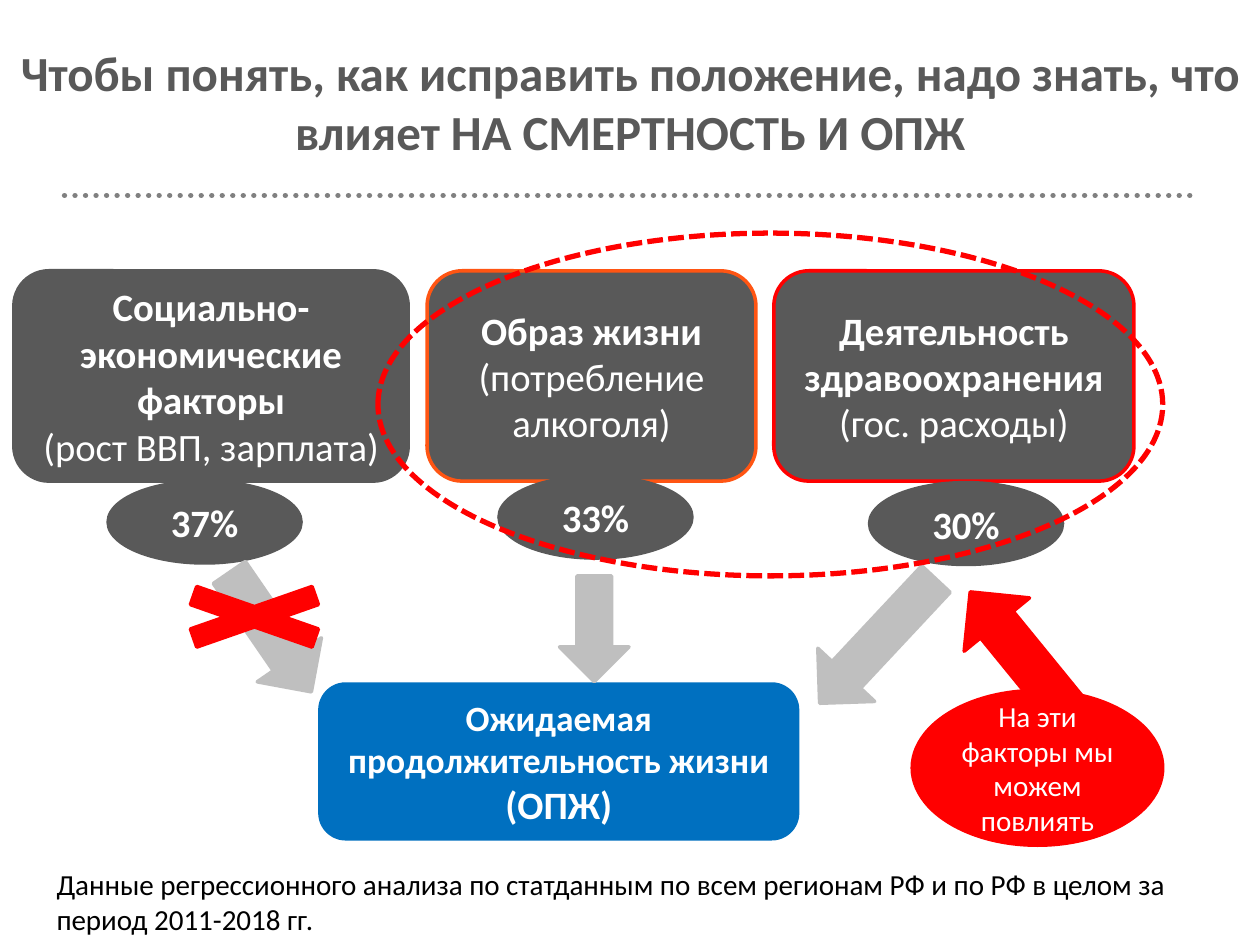
from dataclasses import dataclass
from typing import Optional

from lxml import etree
from pptx import Presentation
from pptx import util as u
from pptx.dml.color import RGBColor
from pptx.enum import dml, shapes, text
from pptx.oxml import ns

DARK = RGBColor(0x59, 0x59, 0x59)
MID = RGBColor(0x80, 0x80, 0x80)
PALE = RGBColor(0xBF, 0xBF, 0xBF)
BLUE = RGBColor(0x00, 0x70, 0xC0)
RED = RGBColor(0xFF, 0x00, 0x00)
AMBER = RGBColor(0xFF, 0x55, 0x13)
WHITE = RGBColor(0xFF, 0xFF, 0xFF)
BLACK = RGBColor(0x00, 0x00, 0x00)
FONT = "Calibri"
KIND = shapes.MSO_SHAPE


@dataclass
class Run:
    words: str
    size: float = 22.1
    bold: bool = True
    tint: RGBColor = WHITE


@dataclass
class Item:
    kind: shapes.MSO_SHAPE
    left: float
    top: float
    width: float
    height: float
    fill: Optional[RGBColor]
    edge: RGBColor
    runs: tuple[Run, ...] = ()
    turn: float = 0


@dataclass
class Factor:
    name: str
    detail: str
    left: float
    width: float
    edge: RGBColor
    share: str
    share_left: float
    share_top: float


def place(shape, left: float, top: float, width: float, height: float) -> None:
    shape.left, shape.top = u.Cm(left), u.Cm(top)
    shape.width, shape.height = u.Cm(width), u.Cm(height)


def write(frame, runs: tuple[Run, ...], align: text.PP_ALIGN) -> None:
    """Put each run in a paragraph of its own."""
    frame.word_wrap = True
    for i, item in enumerate(runs):
        para = frame.paragraphs[0] if i == 0 else frame.add_paragraph()
        para.alignment = align
        run = para.add_run()
        run.text = item.words
        font = run.font
        font.name, font.size, font.bold = FONT, u.Pt(item.size), item.bold
        font.color.rgb = item.tint


def draw(slide, item: Item):
    shape = slide.shapes.add_shape(
        item.kind, u.Cm(item.left), u.Cm(item.top), u.Cm(item.width), u.Cm(item.height))
    shape.shadow.inherit = False
    shape.rotation = item.turn
    if item.fill is None:
        shape.fill.background()
    else:
        shape.fill.solid()
        shape.fill.fore_color.rgb = item.fill
    shape.line.color.rgb = item.edge
    shape.line.width = u.Pt(2)
    if item.runs:
        shape.text_frame.vertical_anchor = text.MSO_ANCHOR.MIDDLE
        write(shape.text_frame, item.runs, text.PP_ALIGN.CENTER)
    return shape


def draw_rule(slide) -> None:
    """Draw the dotted line under the title."""
    rule = slide.shapes.add_connector(
        shapes.MSO_CONNECTOR.STRAIGHT, u.Cm(1.3), u.Cm(3.94), u.Cm(24.1), u.Cm(3.94))
    rule.line.color.rgb = MID
    rule.line.width = u.Pt(3)
    rule.line.dash_style = dml.MSO_LINE.ROUND_DOT
    rule.line._get_or_add_ln().set("cap", "rnd")
    etree.SubElement(rule._element.spPr, ns.qn("a:effectLst"))


def draw_title(slide) -> None:
    title = slide.shapes.title
    place(title, 0, 0.15, 25.4, 3.78)
    frame = title.text_frame
    frame.auto_size = text.MSO_AUTO_SIZE.NONE
    frame.vertical_anchor = text.MSO_ANCHOR.MIDDLE
    words = ("Чтобы понять, как исправить положение, надо знать, "
             "что влияет НА СМЕРТНОСТЬ И ОПЖ")
    write(frame, (Run(words, 28, tint=DARK),), text.PP_ALIGN.CENTER)


def draw_note(slide) -> None:
    note = slide.shapes.add_textbox(u.Cm(0.89), u.Cm(17.35), u.Cm(23.39), u.Cm(1.68))
    words = ("Данные регрессионного анализа по статданным по всем регионам РФ "
             "и по РФ в целом за период 2011-2018 гг.")
    write(note.text_frame, (Run(words, 16.6, False, BLACK),), text.PP_ALIGN.LEFT)


FACTORS = (
    Factor("Социально-экономические факторы", "(рост ВВП, зарплата)",
           0.28, 7.95, DARK, "37%", 2.18, 9.7),
    Factor("Образ жизни", "(потребление алкоголя)",
           8.61, 6.63, AMBER, "33%", 10.06, 9.6),
    Factor("Деятельность здравоохранения", "(гос. расходы)",
           15.6, 7.26, RED, "30%", 17.53, 9.73),
)
RESULT = Item(KIND.ROUNDED_RECTANGLE, 6.45, 13.79, 9.63, 3.12, BLUE, BLUE,
              (Run("Ожидаемая продолжительность жизни", 20.3), Run("(ОПЖ)")))
ARROWS = (
    Item(KIND.RIGHT_ARROW, 3.99, 11.96, 2.92, 1.57, PALE, PALE, turn=55.5),
    Item(KIND.UP_ARROW, 11.28, 11.61, 1.4, 2.13, PALE, PALE, turn=180),
    Item(KIND.RIGHT_ARROW, 15.98, 12.14, 3.43, 1.57, PALE, PALE, turn=133.1),
)
RING = Item(KIND.OVAL, 7.62, 4.7, 15.82, 6.91, None, RED)
MARKS = (
    Item(KIND.LEFT_ARROW, 18.9, 12.47, 3.58, 1.7, RED, RED, turn=50.8),
    Item(KIND.OVAL, 18.39, 13.92, 5.05, 3.12, RED, RED,
         (Run("На эти факторы мы можем повлиять", 16.6, False),)),
    Item(KIND.MATH_MULTIPLY, 2.77, 11.61, 4.72, 1.65, RED, RED),
)


def main() -> None:
    deck = Presentation()
    deck.slide_width, deck.slide_height = u.Cm(25.4), u.Cm(19.05)
    slide = deck.slides.add_slide(deck.slide_layouts[5])
    draw_title(slide)
    draw_rule(slide)
    draw(slide, RESULT)
    for f in FACTORS:
        draw(slide, Item(KIND.ROUNDED_RECTANGLE, f.left, 5.46, f.width, 4.24, DARK,
                         f.edge, (Run(f.name), Run(f.detail, bold=False))))
    for f in FACTORS:
        draw(slide, Item(KIND.OVAL, f.share_left, f.share_top, 3.89, 1.65, DARK, DARK,
                         (Run(f.share),)))
    for arrow in ARROWS:
        draw(slide, arrow)
    ring = draw(slide, RING)
    ring.line.width = u.Pt(3)
    # The XML value sysDash goes by the name SQUARE_DOT here.
    ring.line.dash_style = dml.MSO_LINE.SQUARE_DOT
    dash = ring.line._get_or_add_ln().find(ns.qn("a:prstDash"))
    dash.set("val", "sysDash")
    draw_note(slide)
    for mark in MARKS:
        draw(slide, mark)
    deck.save("out.pptx")


if __name__ == "__main__":
    main()
